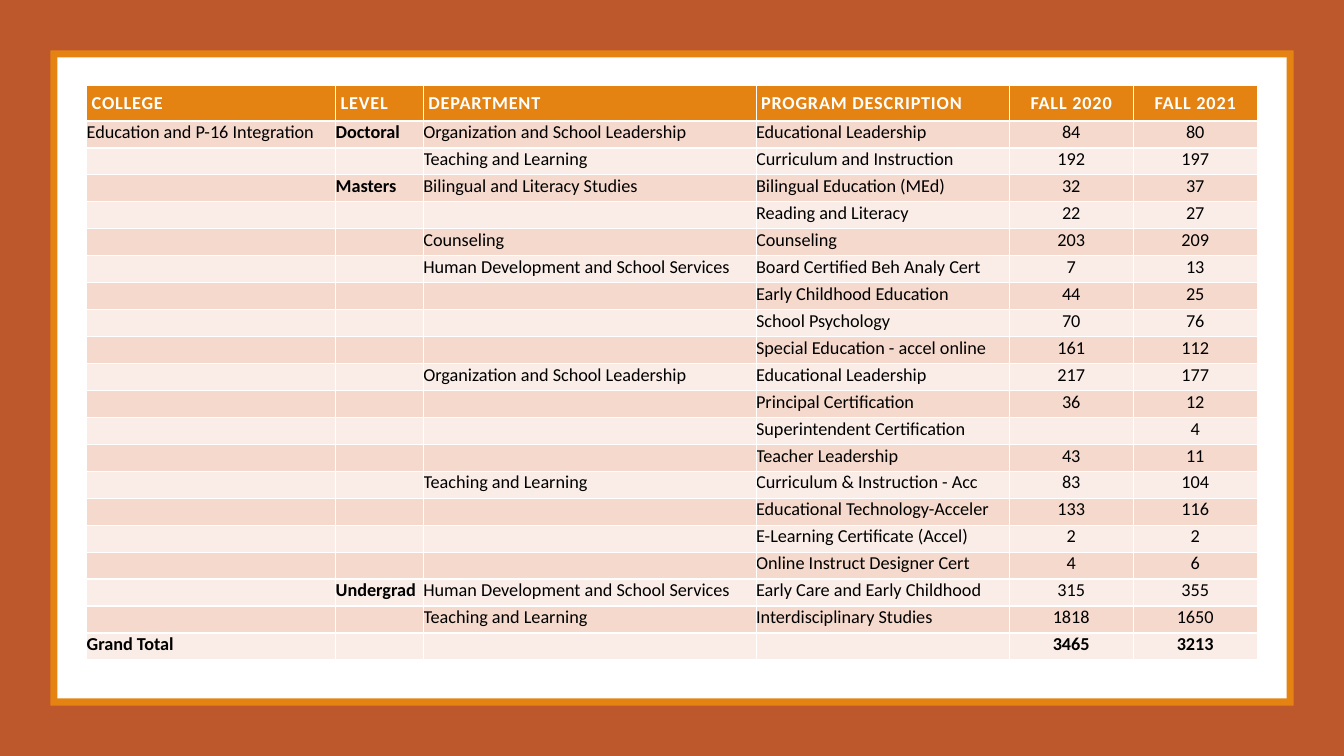
from dataclasses import dataclass
from typing import NamedTuple

import pptx
import pptx.dml.color
import pptx.enum.shapes
import pptx.enum.text
import pptx.util

Inches = pptx.util.Inches
Color = pptx.dml.color.RGBColor.from_string


@dataclass(frozen=True)
class Theme:
    font: str = "Calibri"
    size: float = 13
    header_spacing: str = "60"
    rust: str = "BD582C"
    orange: str = "E48312"
    white: str = "FFFFFF"
    black: str = "000000"
    bands: tuple[str, str] = ("F5D9CC", "FAEDE7")


class Panel(NamedTuple):
    left: float
    top: float
    width: float
    height: float
    color: str


class Column(NamedTuple):
    title: str
    width: float
    centered: bool = False


class Enrollment(NamedTuple):
    college: str
    level: str
    department: str
    program: str
    fall_2020: str
    fall_2021: str


THEME = Theme()
WIDTH, HEIGHT = 13.33, 7.5
TABLE_LEFT, TABLE_TOP, TABLE_HEIGHT = 0.86, 0.85, 5.7
HEADER_HEIGHT = 0.35

PANELS = [
    Panel(0, 0, WIDTH, HEIGHT, THEME.rust),
    Panel(0.5, 0.5, 12.33, 6.5, THEME.orange),
    Panel(0.57, 0.57, 12.19, 6.36, THEME.white),
]

COLUMNS = [
    Column("COLLEGE", 2.47),
    Column("LEVEL", 0.87),
    Column("DEPARTMENT", 3.3),
    Column("PROGRAM DESCRIPTION", 2.51),
    Column("FALL 2020", 1.23, True),
    Column("FALL 2021", 1.23, True),
]

ENROLLMENTS = [
    Enrollment("Education and P-16 Integration", "Doctoral", "Organization and School Leadership",
               "Educational Leadership", "84", "80"),
    Enrollment("", "", "Teaching and Learning", "Curriculum and Instruction", "192", "197"),
    Enrollment("", "Masters", "Bilingual and Literacy Studies", "Bilingual Education (MEd)", "32", "37"),
    Enrollment("", "", "", "Reading and Literacy", "22", "27"),
    Enrollment("", "", "Counseling", "Counseling", "203", "209"),
    Enrollment("", "", "Human Development and School Services", "Board Certified Beh Analy Cert", "7", "13"),
    Enrollment("", "", "", "Early Childhood Education", "44", "25"),
    Enrollment("", "", "", "School Psychology", "70", "76"),
    Enrollment("", "", "", "Special Education - accel online", "161", "112"),
    Enrollment("", "", "Organization and School Leadership", "Educational Leadership", "217", "177"),
    Enrollment("", "", "", "Principal Certification", "36", "12"),
    Enrollment("", "", "", "Superintendent Certification", "", "4"),
    Enrollment("", "", "", "Teacher Leadership", "43", "11"),
    Enrollment("", "", "Teaching and Learning", "Curriculum & Instruction - Acc", "83", "104"),
    Enrollment("", "", "", "Educational Technology-Acceler", "133", "116"),
    Enrollment("", "", "", "E-Learning Certificate (Accel)", "2", "2"),
    Enrollment("", "", "", "Online Instruct Designer Cert", "4", "6"),
    Enrollment("", "Undergrad", "Human Development and School Services",
               "Early Care and Early Childhood", "315", "355"),
    Enrollment("", "", "Teaching and Learning", "Interdisciplinary Studies", "1818", "1650"),
    Enrollment("Grand Total", "", "", "", "3465", "3213"),
]


def add_panel(s: pptx.slide.Slide, panel: Panel) -> None:
    sp = s.shapes.add_shape(
        pptx.enum.shapes.MSO_SHAPE.RECTANGLE,
        Inches(panel.left), Inches(panel.top), Inches(panel.width), Inches(panel.height),
    )
    sp.shadow.inherit = False
    sp.fill.solid()
    sp.fill.fore_color.rgb = Color(panel.color)
    sp.line.fill.background()


def fill_cell(cell: pptx.table._Cell, text: str, fill: str, color: str, bold: bool,
              centered: bool, insets: tuple[float, float, float, float]) -> None:
    cell.fill.solid()
    cell.fill.fore_color.rgb = Color(fill)
    cell.vertical_anchor = pptx.enum.text.MSO_ANCHOR.MIDDLE
    cell.margin_left, cell.margin_top, cell.margin_right, cell.margin_bottom = map(Inches, insets)
    cell.text_frame.text = text
    p = cell.text_frame.paragraphs[0]
    p.alignment = pptx.enum.text.PP_ALIGN.CENTER if centered else pptx.enum.text.PP_ALIGN.LEFT
    p._p.get_or_add_endParaRPr().set("sz", str(round(THEME.size * 100)))
    for r in p.runs:
        r.font.name = THEME.font
        r.font.size = pptx.util.Pt(THEME.size)
        r.font.bold = bold
        r.font.color.rgb = Color(color)


def add_enrollment_table(s: pptx.slide.Slide) -> None:
    table = s.shapes.add_table(
        len(ENROLLMENTS) + 1, len(COLUMNS), Inches(TABLE_LEFT), Inches(TABLE_TOP),
        Inches(sum(column.width for column in COLUMNS)), Inches(TABLE_HEIGHT),
    ).table
    body_height = (TABLE_HEIGHT - HEADER_HEIGHT) / len(ENROLLMENTS)
    for row in table.rows:
        row.height = Inches(body_height)
    table.rows[0].height = Inches(HEADER_HEIGHT)

    for i, column in enumerate(COLUMNS):
        table.columns[i].width = Inches(column.width)
        header = table.cell(0, i)
        fill_cell(header, column.title, THEME.orange, THEME.white, True,
                  column.centered, (0.05, 0.05, 0.05, 0.05))
        for r in header.text_frame.paragraphs[0].runs:
            r._r.get_or_add_rPr().set("spc", THEME.header_spacing)
        for j, enrollment in enumerate(ENROLLMENTS):
            bold = column.title == "LEVEL" or enrollment.college == "Grand Total"
            fill_cell(table.cell(j + 1, i), enrollment[i], THEME.bands[j % 2], THEME.black,
                      bold, column.centered, (0, 0, 0, 0.04))


def main() -> None:
    prs = pptx.Presentation()
    prs.slide_width, prs.slide_height = Inches(WIDTH), Inches(HEIGHT)
    s = prs.slides.add_slide(prs.slide_layouts[6])
    for panel in PANELS:
        add_panel(s, panel)
    add_enrollment_table(s)
    prs.save("out.pptx")


if __name__ == "__main__":
    main()
